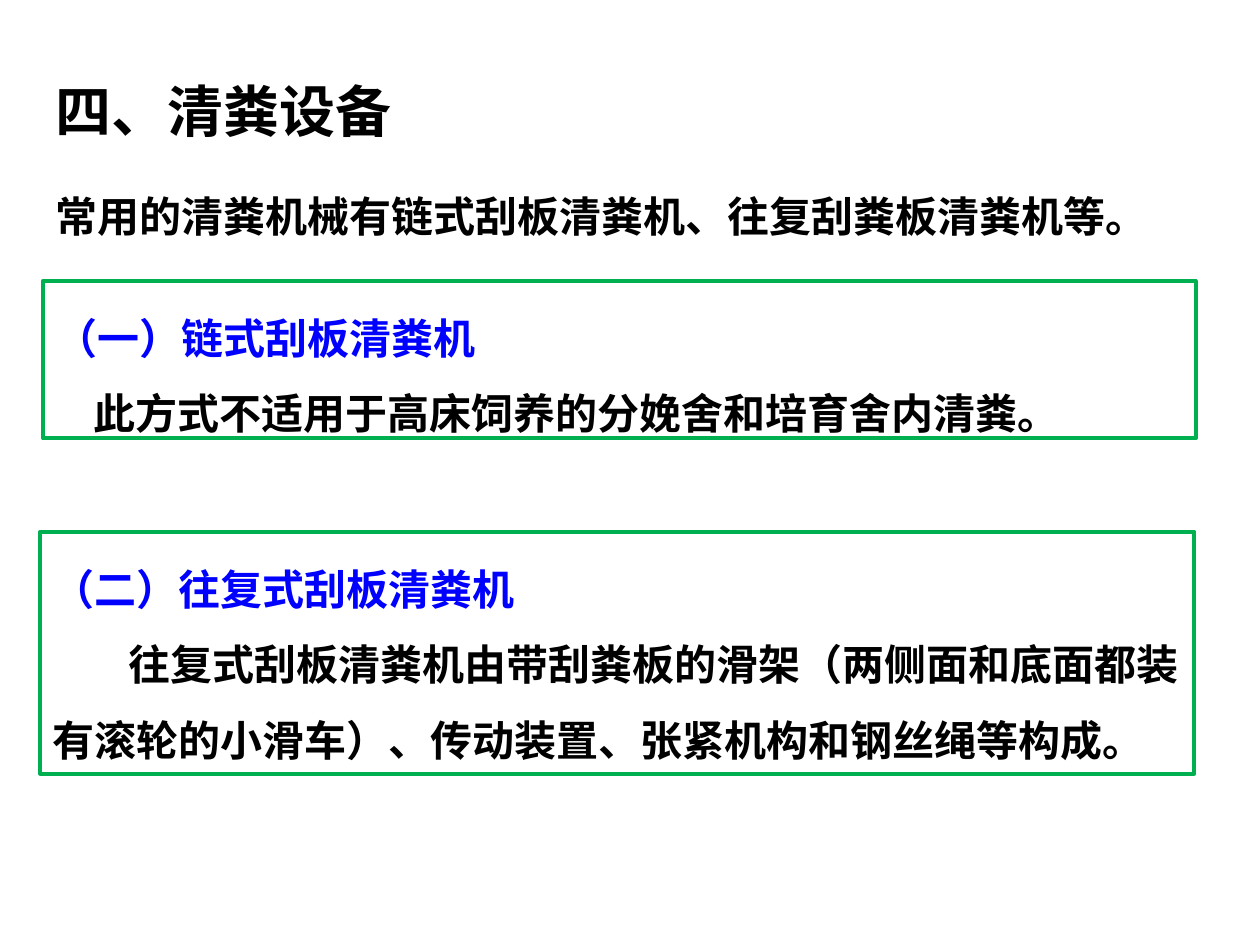
from pptx import Presentation
from pptx import util as u
from pptx.dml.color import RGBColor
from pptx.enum import shapes, text
from pptx.oxml.ns import qn
from lxml import etree

FONT = "Noto Sans CJK SC"
COLORS = {"text": "000000", "heading": "0000FF", "border": "00B050"}
LINE_HEIGHT = 1.2  # single line height as a share of the text size


def write(frame, words, size=24, color="text", spacing=1.0, indent=0, first=False):
    """Add one bold paragraph to a text frame."""
    para = frame.paragraphs[0] if first else frame.add_paragraph()
    para.alignment = text.PP_ALIGN.LEFT
    para.line_spacing = u.Pt(round(size * LINE_HEIGHT * spacing, 1))
    if indent:
        para._p.get_or_add_pPr().set("indent", str(u.Inches(indent)))
    span = para.add_run()
    span.text = words
    span.font.size = u.Pt(size)
    span.font.bold = True
    span.font.name = FONT
    span.font.color.rgb = RGBColor.from_string(COLORS[color])
    east_asian = etree.SubElement(span.font._element, qn("a:ea"))
    east_asian.set("typeface", FONT)


def prepare(frame, wrap=True):
    frame.word_wrap = wrap
    frame.auto_size = text.MSO_AUTO_SIZE.NONE
    frame.vertical_anchor = text.MSO_ANCHOR.TOP


def add_line_of_text(page, box, words, size, wrap=True):
    label = page.shapes.add_textbox(*map(u.Inches, box))
    prepare(label.text_frame, wrap)
    write(label.text_frame, words, size=size, first=True)


def add_machine_panel(page, box, heading, body, indent):
    """Green outlined box with a blue heading and a body paragraph."""
    panel = page.shapes.add_shape(shapes.MSO_SHAPE.RECTANGLE, *map(u.Inches, box))
    panel.shadow.inherit = False
    panel.fill.background()
    panel.line.color.rgb = RGBColor.from_string(COLORS["border"])
    panel.line.width = u.Pt(2.25)
    prepare(panel.text_frame)
    write(panel.text_frame, heading, color="heading", spacing=1.5, first=True)
    write(panel.text_frame, body, spacing=1.5, indent=indent)


def main():
    deck = Presentation()
    deck.slide_width, deck.slide_height = u.Inches(10), u.Inches(7.5)
    page = deck.slides.add_slide(deck.slide_layouts[6])

    # Title and introduction
    add_line_of_text(page, (0.34, 0.56, 2.91, 0.64), "四、清粪设备", 32, wrap=False)
    add_line_of_text(page, (0.34, 1.46, 9.07, 0.5),
                     "常用的清粪机械有链式刮板清粪机、往复刮粪板清粪机等。", 24)

    # Machine types
    add_machine_panel(page, (0.34, 2.23, 9.15, 1.25), "（一）链式刮板清粪机",
                      "此方式不适用于高床饲养的分娩舍和培育舍内清粪。", 0.3)
    add_machine_panel(page, (0.32, 4.22, 9.16, 1.92), "（二）往复式刮板清粪机",
                      "往复式刮板清粪机由带刮粪板的滑架（两侧面和底面都装有滚轮的小滑车）、"
                      "传动装置、张紧机构和钢丝绳等构成。", 0.6)

    deck.save("out.pptx")


if __name__ == "__main__":
    main()
